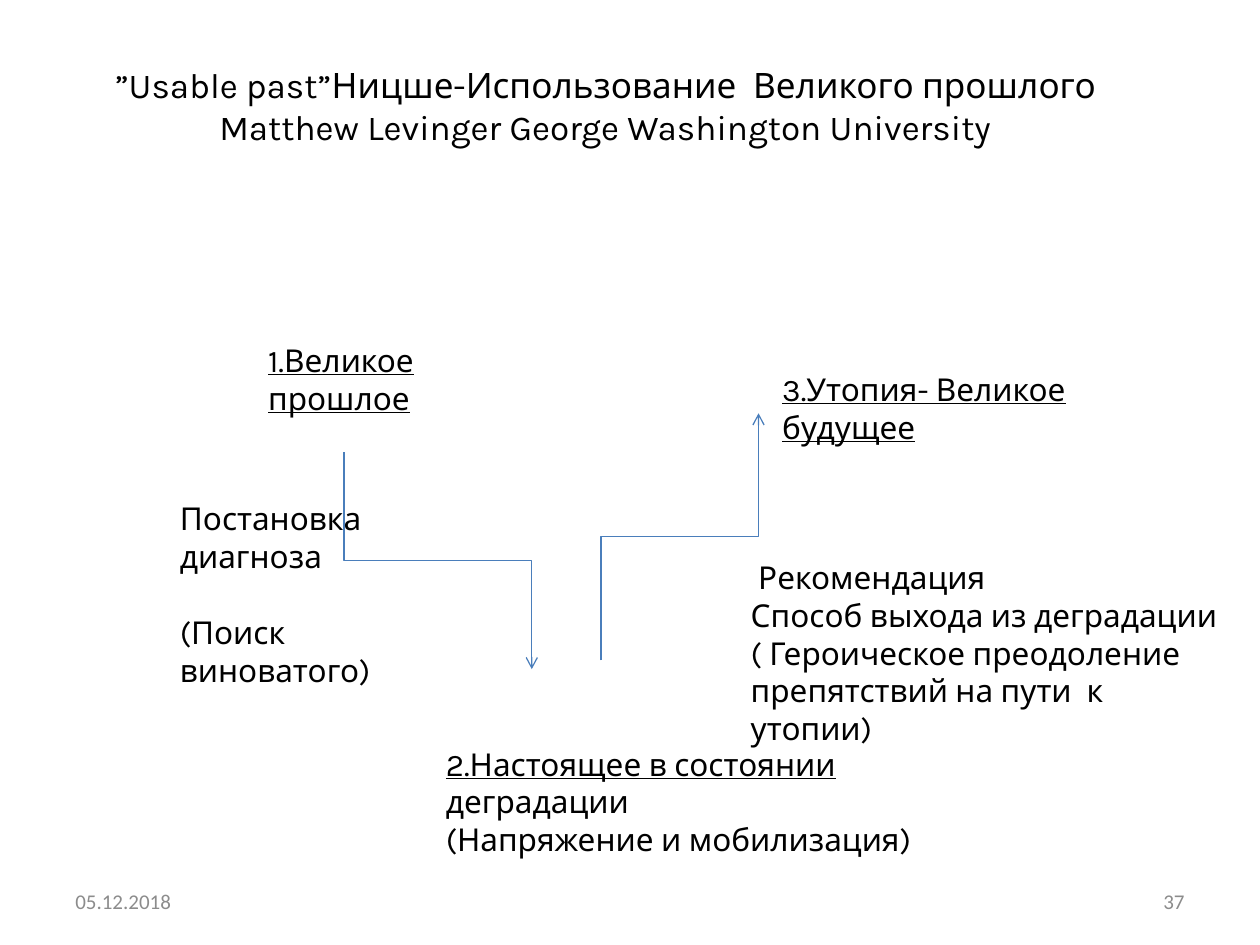
import pptx
import pptx.dml.color
import pptx.enum.shapes
import pptx.enum.text
import pptx.oxml.ns
import pptx.oxml.xmlchemy
import pptx.util

Inches = pptx.util.Inches
Pt = pptx.util.Pt
ALIGN = pptx.enum.text.PP_ALIGN
ANCHOR = pptx.enum.text.MSO_ANCHOR

BLACK, GREY, BLUE = "000000", "8C8C8C", "4A7EBB"

# Each paragraph is a list of (text, underlined) runs.
TITLE = [
    [("”Usable past”Ницше-Использование  Великого прошлого", False)],
    [("Matthew Levinger George Washington University", False)],
]

# (left, top, width, height), paragraphs, space between paragraphs in points
STAGES = [
    ((2.03, 2.66, 2.36, 0.4), [[("1.Великое прошлое", True)]], 0),
    ((6.11, 2.89, 3.19, 0.4), [[("3.Утопия- Великое будущее", True)]], 0),
    ((3.44, 5.86, 3.98, 1.01), [
        [("2.Настоящее в состоянии ", True), ("деградации", False)],
        [("(Напряжение и мобилизация)", False)],
    ], 0),
    ((1.33, 3.91, 1.8, 1.6), [
        [("Постановка диагноза", False)],
        [("(Поиск виноватого)", False)],
    ], 22),
    ((5.86, 4.38, 3.91, 1.3), [
        [(" Рекомендация", False)],
        [("Способ выхода из деградации", False)],
        [("( Героическое преодоление  препятствий на пути  к утопии)", False)],
    ], 0),
]

FOOTERS = [(0.5, "05.12.2018", ALIGN.LEFT), (7.17, "37", ALIGN.RIGHT)]

# Start and end points of the arrows between stages
ARROWS = [((2.73, 3.59), (4.22, 5.31)), ((4.77, 5.24), (6.02, 3.28))]


def rgb(hex_colour):
    return pptx.dml.color.RGBColor.from_string(hex_colour)


def add_text(slide, place, paragraphs, size=18, font="Karla", colour=BLACK,
             align=ALIGN.LEFT, anchor=ANCHOR.TOP, gap=0, top_inset=0.05):
    frame = slide.shapes.add_textbox(*map(Inches, place)).text_frame
    frame.word_wrap = True
    frame.vertical_anchor = anchor
    frame.margin_top = Inches(top_inset)
    for index, runs in enumerate(paragraphs):
        paragraph = frame.add_paragraph() if index else frame.paragraphs[0]
        paragraph.alignment = align
        if index and gap:
            paragraph.space_before = Pt(gap)
        for text, underlined in runs:
            run = paragraph.add_run()
            run.text = text
            run.font.size = Pt(size)
            run.font.name = font
            run.font.underline = underlined
            run.font.color.rgb = rgb(colour)


def add_step_arrow(slide, start, end):
    """Elbow arrow that leaves and arrives vertically: an elbow turned by 270 degrees."""
    (x1, y1), (x2, y2) = start, end
    mid_x, mid_y = (x1 + x2) / 2, (y1 + y2) / 2
    half_dx, half_dy = (x2 - x1) / 2, (y2 - y1) / 2
    arrow = slide.shapes.add_connector(
        pptx.enum.shapes.MSO_CONNECTOR.ELBOW,
        Inches(mid_x + half_dy), Inches(mid_y - half_dx),
        Inches(mid_x - half_dy), Inches(mid_y + half_dx))
    arrow.line.color.rgb = rgb(BLUE)
    arrow.line.width = Pt(0.75)
    properties = arrow._element.spPr
    properties.xfrm.set("rot", str(270 * 60000))
    head = pptx.oxml.xmlchemy.OxmlElement("a:tailEnd")
    head.set("type", "arrow")
    properties.find(pptx.oxml.ns.qn("a:ln")).append(head)
    properties.append(pptx.oxml.xmlchemy.OxmlElement("a:effectLst"))


def main():
    deck = pptx.Presentation()
    deck.slide_width, deck.slide_height = Inches(10), Inches(7.5)
    slide = deck.slides.add_slide(deck.slide_layouts[6])

    add_text(slide, (0, 0, 9.61, 1.48), TITLE, size=20,
             align=ALIGN.CENTER, top_inset=0.5)
    for start, end in ARROWS:
        add_step_arrow(slide, start, end)
    for place, paragraphs, gap in STAGES:
        add_text(slide, place, paragraphs, gap=gap)
    for left, text, align in FOOTERS:
        add_text(slide, (left, 6.95, 2.33, 0.4), [[(text, False)]], size=12,
                 font="Calibri", colour=GREY, align=align, anchor=ANCHOR.MIDDLE)

    deck.save("out.pptx")


if __name__ == "__main__":
    main()
